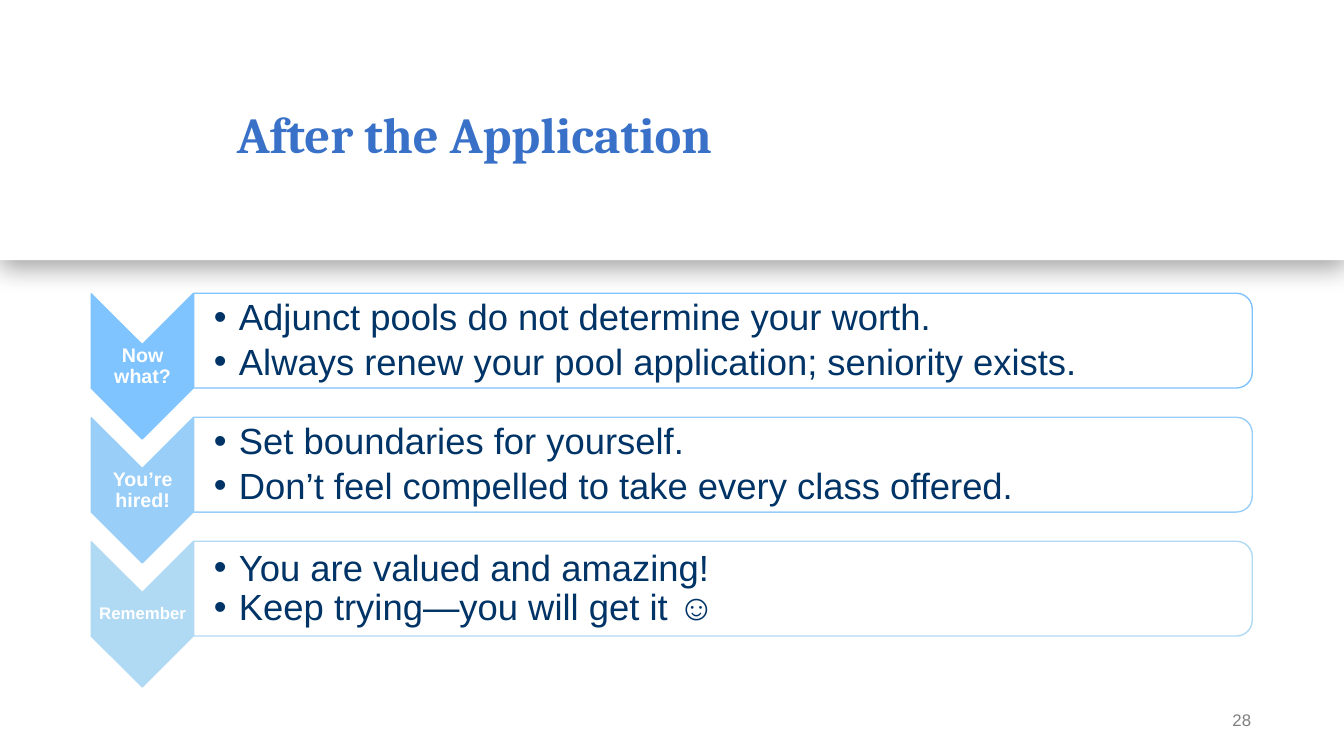
"""Build the "After the Application" slide: three chevron steps with bulleted panels."""
from typing import NamedTuple

from lxml import etree
from pptx import Presentation
from pptx.dml.color import RGBColor
from pptx.enum.shapes import MSO_SHAPE
from pptx.enum.text import MSO_ANCHOR, MSO_AUTO_SIZE, PP_ALIGN
from pptx.oxml.ns import qn
from pptx.util import Pt

RECT = MSO_SHAPE.RECTANGLE
CHEVRON = MSO_SHAPE.CHEVRON
PANEL = MSO_SHAPE.ROUND_2_SAME_RECTANGLE
MIDDLE = MSO_ANCHOR.MIDDLE
NO_FIT = MSO_AUTO_SIZE.NONE
LEFT, CENTER, RIGHT = PP_ALIGN.LEFT, PP_ALIGN.CENTER, PP_ALIGN.RIGHT

SCALE = 9144
PITCH = 123
WHITE, NAVY, BLUE, GRAY = "FFFFFF", "003366", "3871C7", "7F7F7F"


class Box(NamedTuple):
    left: int
    top: int
    width: int
    height: int


class Step(NamedTuple):
    label: str
    size: int
    color: str
    lines: tuple[str, str]
    gap: float


STEPS = (
    Step("Now what?", 14, "7FC3FF",
         ("Adjunct pools do not determine your worth.",
          "Always renew your pool application; seniority exists."), 3.9),
    Step("You’re hired!", 14, "98CEF8",
         ("Set boundaries for yourself.",
          "Don’t feel compelled to take every class offered."), 3.9),
    Step("Remember", 12, "B0D9F3",
         ("You are valued and amazing!",
          "Keep trying—you will get it ☺"), 0),
)


def px(count: int) -> int:
    return count * SCALE


def rgb(code: str) -> RGBColor:
    return RGBColor.from_string(code)


def place(shape, box: Box) -> None:
    shape.left, shape.top, shape.width, shape.height = map(px, box)


def draw(slide, kind, box: Box, fill: str, line: str = "", turn: int = 0):
    shape = slide.shapes.add_shape(kind, *map(px, box))
    shape.shadow.inherit = False
    shape.rotation = turn
    shape.fill.solid()
    shape.fill.fore_color.rgb = rgb(fill)
    if line:
        shape.line.color.rgb = rgb(line)
        shape.line.width = Pt(1)
    else:
        shape.line.fill.background()
    return shape


def frame(shape, pads: tuple[int, int, int, int]):
    text = shape.text_frame
    text.word_wrap = True
    text.auto_size = NO_FIT
    text.vertical_anchor = MIDDLE
    text.margin_left, text.margin_top, text.margin_right, text.margin_bottom = map(px, pads)
    return text


def style(para, size: int, color: str, align, bold: bool = False,
          face: str = "Arial", space: float = 0.9) -> None:
    para.alignment = align
    para.line_spacing = space
    font = para.font
    font.name, font.size, font.bold = face, Pt(size), bold
    font.color.rgb = rgb(color)


def bullet(para, color: str) -> None:
    props = para._p.get_or_add_pPr()
    props.set("marL", str(px(25)))
    props.set("indent", str(px(-25)))
    tint = etree.SubElement(props, qn("a:buClr"))
    etree.SubElement(tint, qn("a:srgbClr"), val=color)
    etree.SubElement(props, qn("a:buFont"), typeface="Arial")
    etree.SubElement(props, qn("a:buChar"), char="•")


def fade(shape, share: int) -> None:
    tint = shape.element.spPr.find(qn("a:solidFill")).find(qn("a:srgbClr"))
    etree.SubElement(tint, qn("a:alpha"), val=str(share * 1000))


def shade(shape) -> None:
    effects = shape.element.spPr.find(qn("a:effectLst"))
    cast = etree.SubElement(effects, qn("a:outerShdw"), blurRad=str(Pt(18)),
                            dist=str(Pt(5)), dir="5400000", algn="t", rotWithShape="0")
    tint = etree.SubElement(cast, qn("a:srgbClr"), val="000000")
    etree.SubElement(tint, qn("a:alpha"), val="35000")


def write(slide, box: Box, text: str, pads: tuple[int, int, int, int],
          size: int, color: str, align, bold: bool = False) -> None:
    shape = slide.shapes.add_textbox(*map(px, box))
    para = frame(shape, pads).paragraphs[0]
    para.text = text
    style(para, size, color, align, bold)


def header(slide) -> None:
    band = draw(slide, RECT, Box(0, 0, 1333, 258), WHITE)
    shade(band)
    title = slide.shapes.title
    band.element.addnext(title.element)
    place(title, Box(225, 44, 1017, 184))
    para = frame(title, (10, 5, 10, 5)).paragraphs[0]
    para.text = "After the Application"
    style(para, 36, BLUE, LEFT, True, "Cambria")


def row(slide, body, step: Step, drop: int) -> None:
    draw(slide, CHEVRON, Box(69, 313 + drop, 144, 101), step.color, step.color, 90)
    write(slide, Box(91, 342 + drop, 101, 43), step.label, (1, 1, 1, 1),
          step.size, WHITE, CENTER, True)
    panel = draw(slide, PANEL, Box(670, drop - 187, 94, 1050), WHITE, step.color, 90)
    panel.adjustments[0], panel.adjustments[1] = 0.167, 0
    fade(panel, 90)
    panel.element.addnext(body.element)
    place(body, Box(192, 296 + drop, 1045, 85))
    text = frame(body, (20, 2, 2, 2))
    text.text = "\n".join(step.lines)
    for index, para in enumerate(text.paragraphs):
        para.level = 1
        bullet(para, NAVY)
        para.space_before = Pt(step.gap if index else 0)
        style(para, 26, NAVY, LEFT)


def main() -> None:
    deck = Presentation()
    deck.slide_width, deck.slide_height = px(1333), px(750)
    slide = deck.slides.add_slide(deck.slide_layouts.get_by_name("Comparison"))
    bodies = [item for item in slide.placeholders if item.placeholder_format.idx]
    header(slide)
    write(slide, Box(1141, 695, 100, 40), "28", (10, 5, 0, 5), 12, GRAY, RIGHT)
    for index, (body, step) in enumerate(zip(bodies, STEPS)):
        row(slide, body, step, index * PITCH)
    for spare in bodies[len(STEPS):]:
        spare.element.getparent().remove(spare.element)
    deck.save("out.pptx")


if __name__ == "__main__":
    main()
